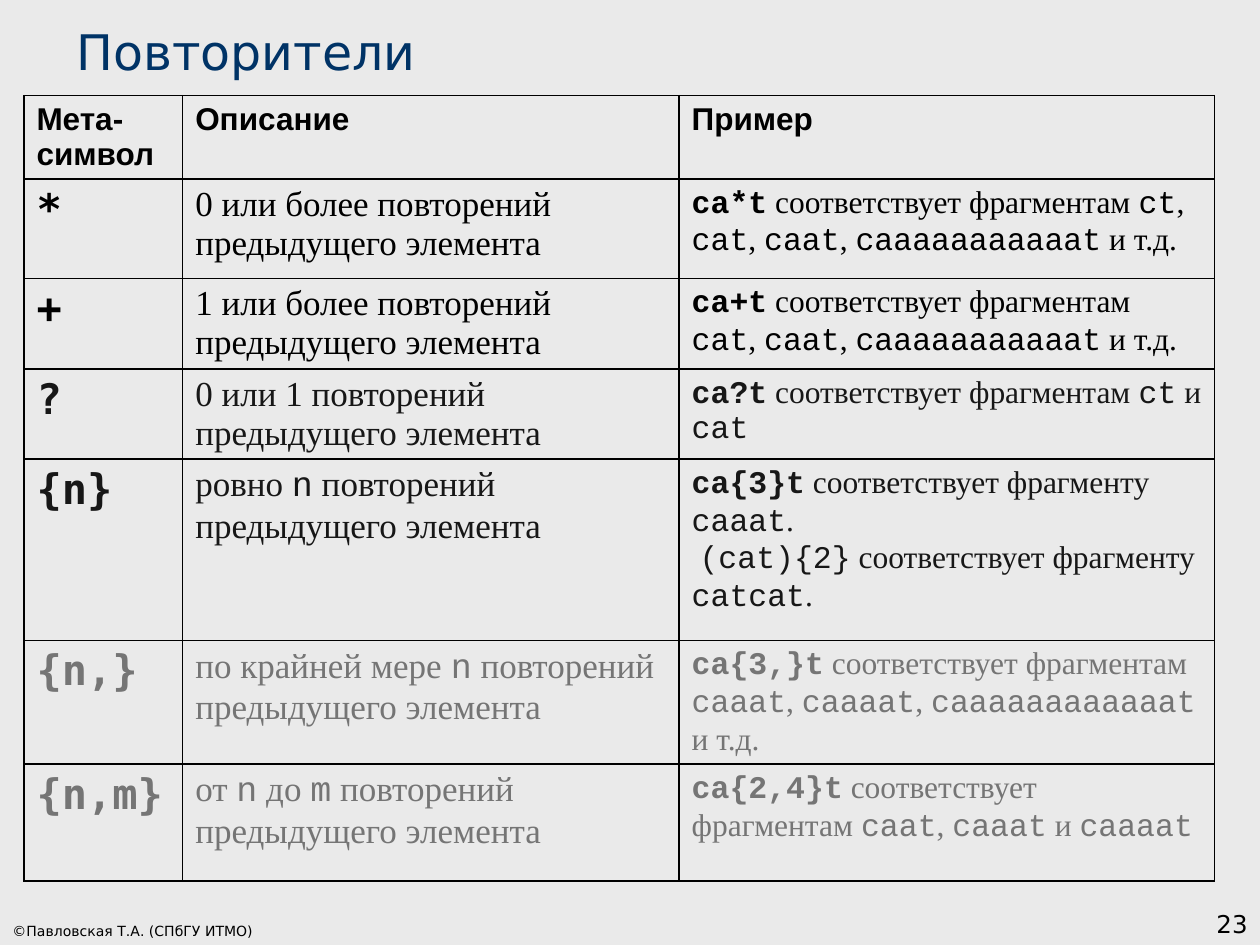
import pptx
import pptx.util
import pptx.dml.color
import pptx.enum.text
import pptx.oxml
import pptx.oxml.ns
import lxml.etree

Inches = pptx.util.Inches
Pt = pptx.util.Pt
RGBColor = pptx.dml.color.RGBColor
ALIGN = pptx.enum.text.PP_ALIGN
ANCHOR = pptx.enum.text.MSO_ANCHOR

BACKGROUND = RGBColor(0xEA, 0xEA, 0xEA)
NAVY = RGBColor(0x00, 0x33, 0x66)
BLACK = RGBColor(0x00, 0x00, 0x00)
DARK = RGBColor(0x17, 0x17, 0x17)
GREY = RGBColor(0x75, 0x75, 0x75)

SANS = "DejaVu Sans"
MONO = "DejaVu Sans Mono"
SERIF = "Times New Roman"
CODE = "Courier New"

COLUMN_WIDTHS = [1.26, 3.94, 4.25]
ROW_HEIGHTS = [0.66, 0.79, 0.71, 0.71, 1.44, 0.98, 0.93]
HEADINGS = ["Мета-символ", "Описание", "Пример"]

QUANTIFIERS = [
    ("*", "0 или более повторений предыдущего элемента",
     "`ca*t` соответствует фрагментам `ct`, `cat`, `caat`, `caaaaaaaaaaat` и т.д.", BLACK),
    ("+", "1 или более повторений предыдущего элемента",
     "`ca+t` соответствует фрагментам `cat`, `caat`, `caaaaaaaaaaat` и т.д.", BLACK),
    ("?", "0 или 1 повторений предыдущего элемента",
     "`ca?t` соответствует фрагментам `ct` и `cat`", DARK),
    ("{n}", "ровно `n` повторений предыдущего элемента",
     "`ca{3}t` соответствует фрагменту `caaat`.\n"
     " `(cat){2}` соответствует фрагменту `catcat`.", DARK),
    ("{n,}", "по крайней мере `n` повторений предыдущего элемента",
     "`ca{3,}t` соответствует фрагментам `caaat`, `caaaat`, `caaaaaaaaaaaat` и т.д.", GREY),
    ("{n,m}", "от `n` до `m` повторений предыдущего элемента",
     "`ca{2,4}t` соответствует фрагментам `caat`, `caaat` и `caaaat`", GREY),
]


def format_font(font, name, size, color, bold=False):
    font.name = name
    font.size = Pt(size)
    font.color.rgb = color
    font.bold = bold


def write_marked(text_frame, marked, size, color):
    lines = marked.split("\n")
    text_frame.text = "\n" * (len(lines) - 1)
    for paragraph, line in zip(text_frame.paragraphs, lines):
        pieces = line.split("`")
        for index, piece in enumerate(pieces):
            if piece:
                run = paragraph.add_run()
                run.text = piece
                opens_line = index == 1 and not pieces[0]
                format_font(run.font, CODE if index % 2 else SERIF, size, color, opens_line)


presentation = pptx.Presentation()
presentation.slide_width = Inches(10)
presentation.slide_height = Inches(7.5)
slide = presentation.slides.add_slide(presentation.slide_layouts[5])
slide.background.fill.solid()
slide.background.fill.fore_color.rgb = BACKGROUND

title = slide.shapes.title
title.left, title.top = Inches(0.51), Inches(0.12)
title.width, title.height = Inches(9.37), Inches(0.57)
title.text_frame.text = "Повторители"
title.text_frame.auto_size = pptx.enum.text.MSO_AUTO_SIZE.NONE
title.text_frame.vertical_anchor = ANCHOR.BOTTOM
title.text_frame.paragraphs[0].alignment = ALIGN.LEFT
format_font(title.text_frame.paragraphs[0].runs[0].font, SANS, 28, NAVY)

for text, left, top, width, height, size, alignment in [
    ("©Павловская Т.А. (СПбГУ ИТМО)", 0, 7.22, 3.11, 0.28, 8, ALIGN.LEFT),
    ("23", 7.92, 7, 2.08, 0.5, 14, ALIGN.RIGHT),
]:
    footer = slide.shapes.add_textbox(Inches(left), Inches(top), Inches(width), Inches(height))
    footer.text_frame.word_wrap = True
    footer.text_frame.vertical_anchor = ANCHOR.BOTTOM
    footer.text_frame.text = text
    footer.text_frame.paragraphs[0].alignment = alignment
    format_font(footer.text_frame.paragraphs[0].runs[0].font, SANS, size, BLACK)

table = slide.shapes.add_table(
    len(ROW_HEIGHTS), len(COLUMN_WIDTHS), Inches(0.19), Inches(0.76),
    Inches(sum(COLUMN_WIDTHS)), Inches(sum(ROW_HEIGHTS))).table
table.first_row = False
table.horz_banding = False
for column, width in zip(table.columns, COLUMN_WIDTHS):
    column.width = Inches(width)
for row, height in zip(table.rows, ROW_HEIGHTS):
    row.height = Inches(height)

for cell in table.iter_cells():
    cell.margin_bottom = Inches(0)
    properties = cell._tc.get_or_add_tcPr()
    for side in ("lnL", "lnR", "lnT", "lnB"):
        border = lxml.etree.SubElement(properties, pptx.oxml.ns.qn("a:" + side), w=str(Pt(1)))
        line_fill = lxml.etree.SubElement(border, pptx.oxml.ns.qn("a:solidFill"))
        lxml.etree.SubElement(line_fill, pptx.oxml.ns.qn("a:srgbClr"), val=str(BLACK))
    cell.fill.background()

for column, heading in enumerate(HEADINGS):
    heading_text = table.cell(0, column).text_frame
    heading_text.text = heading
    format_font(heading_text.paragraphs[0].runs[0].font, "Arial", 18, BLACK, True)

for row, (symbol, description, example, color) in enumerate(QUANTIFIERS, start=1):
    symbol_text = table.cell(row, 0).text_frame
    symbol_text.text = symbol
    format_font(symbol_text.paragraphs[0].runs[0].font, MONO, 24, color, True)
    write_marked(table.cell(row, 1).text_frame, description, 20, color)
    write_marked(table.cell(row, 2).text_frame, example, 18, color)

presentation.save("out.pptx")
